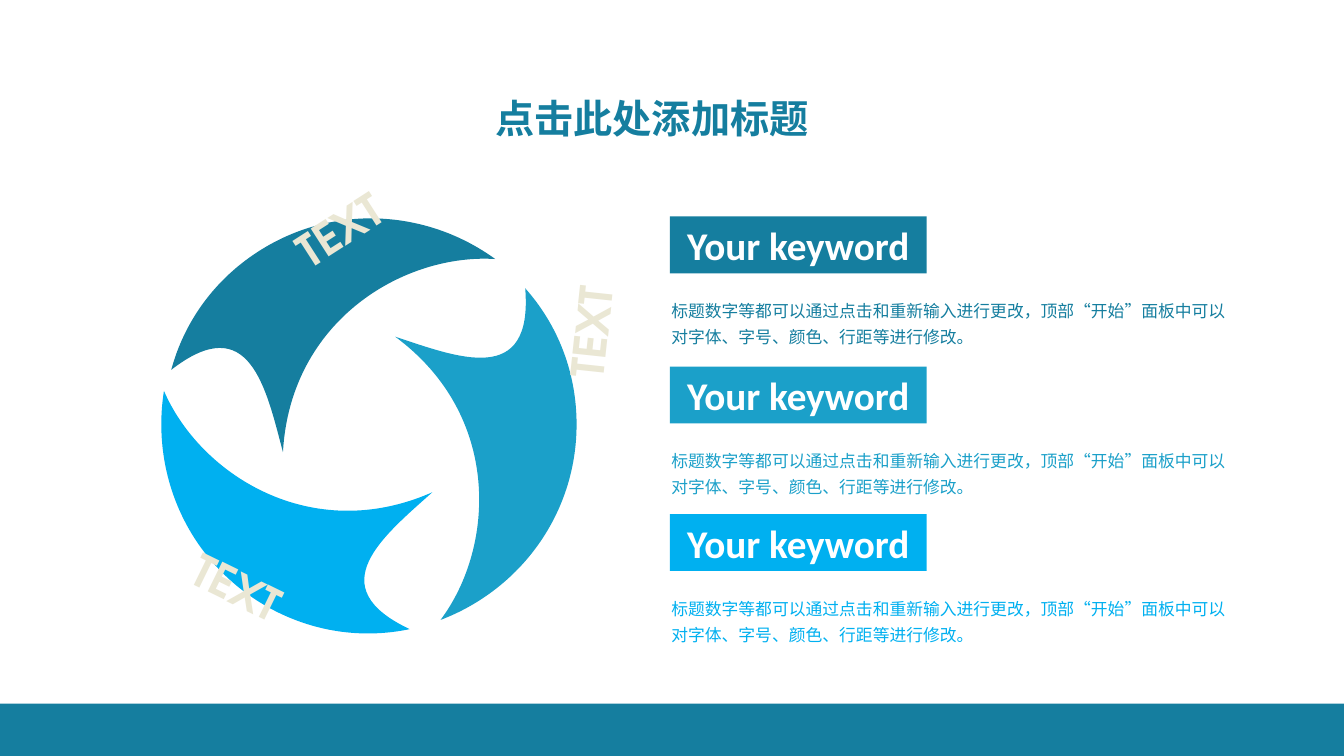
"""Build a slide with a three-blade wheel and three keyword rows."""
from pptx import Presentation
from pptx.dml.color import RGBColor as Rgb
from pptx.enum.shapes import MSO_SHAPE as Kind
from pptx.enum.text import MSO_ANCHOR as Anchor, MSO_AUTO_SIZE as Auto, PP_ALIGN as Align
from pptx.oxml.ns import qn
from pptx.util import Inches, Pt
from lxml.etree import SubElement

deck = Presentation()
deck.slide_width, deck.slide_height = Inches(13.33), Inches(7.5)
col, row = deck.slide_width / 100, deck.slide_height / 100
slide = deck.slides.add_slide(deck.slide_layouts[5])
parts = slide.shapes

TEAL, BLUE, SKY, SAND, WHITE = "157E9F", "1BA0C9", "00B0F0", "EAE7D4", "FFFFFF"
HAN = "Noto Sans CJK SC"
NOTE = "标题数字等都可以通过点击和重新输入进行更改，顶部“开始”面板中可以对字体、字号、颜色、行距等进行修改。"


def paint(shape, hue):
    shape.shadow.inherit = False
    shape.fill.solid()
    shape.fill.fore_color.rgb = Rgb.from_string(hue)
    shape.line.fill.background()


def write(shape, text, size, face, hue, bold=False, align=Align.LEFT,
          anchor=Anchor.TOP, lead=1.0, inset=0.1):
    frame = shape.text_frame
    frame.word_wrap, frame.auto_size = True, Auto.NONE
    frame.vertical_anchor = anchor
    frame.margin_left = frame.margin_right = Inches(inset)
    para = frame.paragraphs[0]
    para.alignment, para.line_spacing = align, lead
    run = para.add_run()
    run.text = text
    font = run.font
    font.size, font.name, font.bold = Pt(size), face, bold
    font.color.rgb = Rgb.from_string(hue)
    SubElement(run._r.get_or_add_rPr(), qn("a:ea"), typeface=face)


start = (9.68, 0)
knots = [
    (12.08, 4.8), (13.5, 11.07), (13.5, 18),
    (13.5, 29.87), (9.3, 39.87), (3.38, 43.87),
    (7.43, 34.27), (7.95, 16.8), (0, 6.4),
    (4.73, 9.2), (10.28, 13.07), start,
]
dots = [(round(x * col), round(y * row)) for x, y in knots]

blades = [(29.4, 38.13, 0, BLUE), (17.92, 19.33, 236.8, TEAL), (14.48, 45.87, 119.8, SKY)]
for x, y, turn, hue in blades:
    pen = parts.build_freeform(*dots[-1])
    pen.add_line_segments(dots, close=True)
    blade = pen.convert_to_shape(round(x * col), round(y * row))
    blade.rotation = turn
    paint(blade, hue)
    lines = list(blade._element.iter(qn("a:lnTo")))
    for first in range(0, len(lines), 3):
        trio = lines[first:first + 3]
        curve = SubElement(trio[0].getparent(), qn("a:cubicBezTo"))
        trio[0].addprevious(curve)
        for line in trio:
            curve.append(line[0])
            line.getparent().remove(line)

for x, y, turn in [(21.05, 26.05, 327.3), (13.45, 73.35, 26.1), (39.76, 39.68, 276.1)]:
    tag = parts.add_textbox(round(x * col), round(y * row), round(8.4 * col), round(8.53 * row))
    tag.rotation = turn
    write(tag, "TEXT", size=32, face="TeX Gyre Adventor", hue=SAND, bold=True,
          align=Align.CENTER, anchor=Anchor.MIDDLE, inset=0)

band = parts.add_shape(Kind.RECTANGLE, 0, round(93.07 * row), deck.slide_width, round(6.93 * row))
paint(band, TEAL)

title = parts.title
title.left, title.top = round(36.11 * col), round(11.73 * row)
title.width, title.height = round(25.81 * col), round(7.6 * row)
write(title, "点击此处添加标题", size=28, face=HAN, hue=TEAL, bold=True, anchor=Anchor.MIDDLE)

for top, hue in [(28.63, TEAL), (48.5, BLUE), (68, SKY)]:
    bar = parts.add_shape(Kind.RECTANGLE, round(49.84 * col), round(top * row),
                          round(19.1 * col), round(7.53 * row))
    paint(bar, hue)
    write(bar, "Your keyword", size=28, face="Calibri", hue=WHITE, bold=True,
          align=Align.CENTER, anchor=Anchor.MIDDLE)
    note = parts.add_textbox(round(49.21 * col), round((top + 9.7) * row),
                             round(43.59 * col), round(8.4 * row))
    write(note, NOTE, size=12, face=HAN, hue=hue, lead=1.3)

deck.save("out.pptx")
